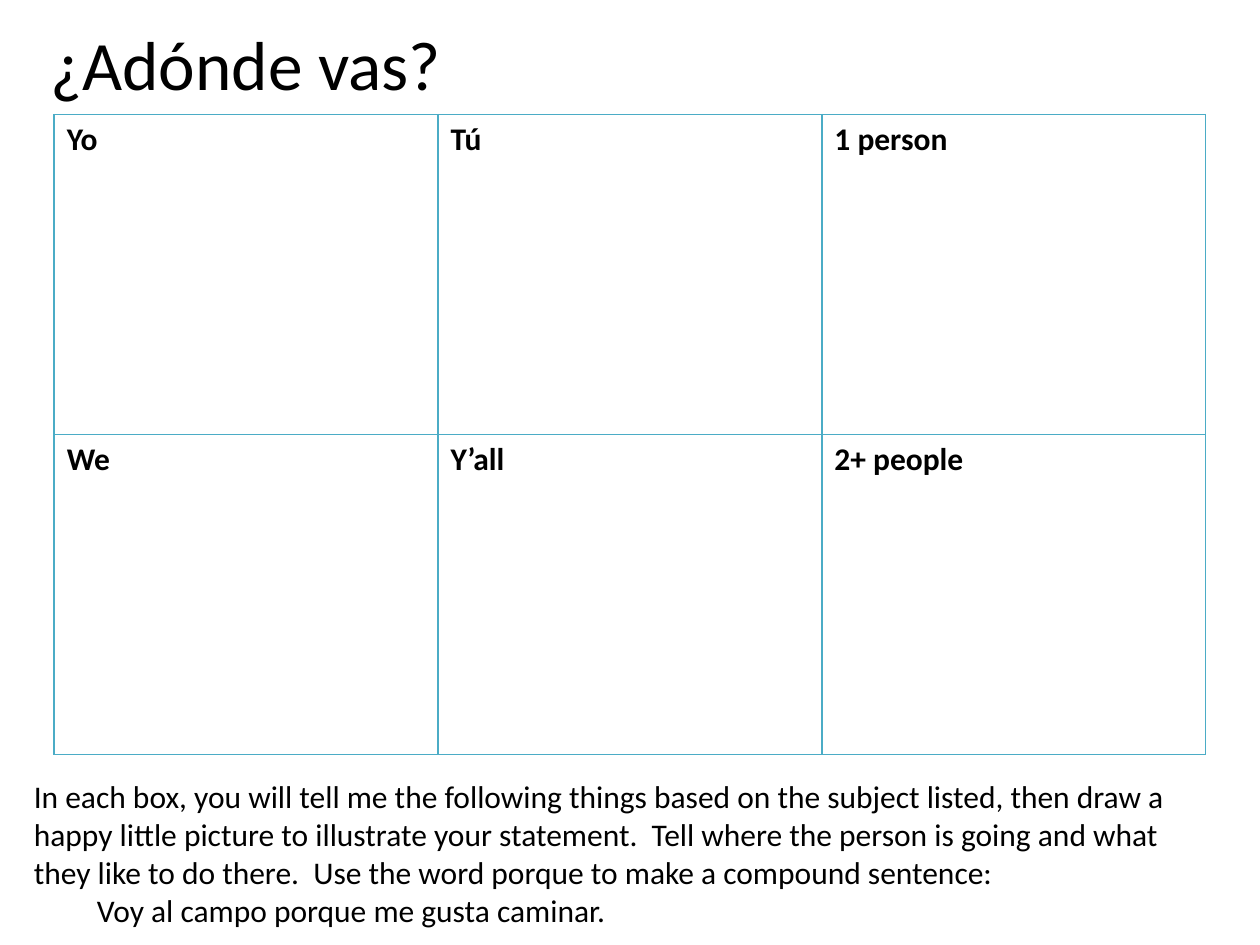
from lxml.etree import SubElement
from pptx import Presentation
from pptx.dml.color import RGBColor
from pptx.enum.text import MSO_ANCHOR, MSO_AUTO_SIZE, PP_ALIGN
from pptx.oxml.ns import qn
from pptx.util import Inches, Pt

COLORS = {"text": "000000", "border": "4BACC6", "background": "FFFFFF"}
FONT = "Calibri"
SUBJECTS = [["Yo", "Tú", "1 person"], ["We", "Y’all", "2+ people"]]
INSTRUCTIONS = (
    "In each box, you will tell me the following things based on the subject "
    "listed, then draw a happy little picture to illustrate your statement.  "
    "Tell where the person is going and what they like to do there.  "
    "Use the word porque to make a compound sentence:"
)
EXAMPLE = "Voy al campo porque me gusta caminar."


def add_run(paragraph, text, size=18, bold=False):
    """Add one formatted run to a paragraph."""
    run = paragraph.add_run()
    run.text = text
    run.font.name = FONT
    run.font.size = Pt(size)
    run.font.bold = bold
    run.font.color.rgb = RGBColor.from_string(COLORS["text"])


def set_borders(cell):
    """Draw a thin line on all four sides of a cell."""
    properties = cell._tc.get_or_add_tcPr()
    for index, side in enumerate(("lnL", "lnR", "lnT", "lnB")):
        line = SubElement(properties, qn(f"a:{side}"), w=str(Pt(1)))
        fill = SubElement(line, qn("a:solidFill"))
        SubElement(fill, qn("a:srgbClr"), val=COLORS["border"])
        properties.insert(index, line)


def place_title(slide, left, top, width, height):
    """Place and format the title."""
    title = slide.shapes.title
    title.left, title.top, title.width, title.height = left, top, width, height
    frame = title.text_frame
    frame.word_wrap = True
    frame.auto_size = MSO_AUTO_SIZE.NONE
    frame.vertical_anchor = MSO_ANCHOR.MIDDLE
    paragraph = frame.paragraphs[0]
    paragraph.alignment = PP_ALIGN.CENTER
    add_run(paragraph, "¿Adónde vas?", 39.6)


def add_subject_table(slide, left, top, width, height):
    """Add the grid of drawing boxes, one for each subject."""
    table = slide.shapes.add_table(
        len(SUBJECTS), len(SUBJECTS[0]), left, top, width, height
    ).table
    table.first_row = False
    table.horz_banding = False
    for row, subjects in enumerate(SUBJECTS):
        for column, subject in enumerate(subjects):
            cell = table.cell(row, column)
            cell.fill.solid()
            cell.fill.fore_color.rgb = RGBColor.from_string(COLORS["background"])
            set_borders(cell)
            add_run(cell.text_frame.paragraphs[0], subject, bold=True)


def add_instructions(slide, left, top, width, height):
    """Add the instructions with an indented example sentence."""
    frame = slide.shapes.add_textbox(left, top, width, height).text_frame
    frame.word_wrap = True
    frame.auto_size = MSO_AUTO_SIZE.SHAPE_TO_FIT_TEXT
    add_run(frame.paragraphs[0], INSTRUCTIONS)
    example = frame.add_paragraph()
    example._p.get_or_add_pPr().set("marL", str(Inches(0.5)))
    add_run(example, EXAMPLE)


def main():
    """Build and save the presentation."""
    presentation = Presentation()
    presentation.slide_width = Inches(10)
    presentation.slide_height = Inches(7.5)
    slide = presentation.slides.add_slide(presentation.slide_layouts[5])
    place_title(slide, Inches(0.17), Inches(0.19), Inches(3.56), Inches(0.62))
    add_subject_table(slide, Inches(0.43), Inches(0.91), Inches(9.14), Inches(5.08))
    add_instructions(slide, Inches(0.17), Inches(6.12), Inches(9.57), Inches(1.31))
    presentation.save("out.pptx")


if __name__ == "__main__":
    main()
